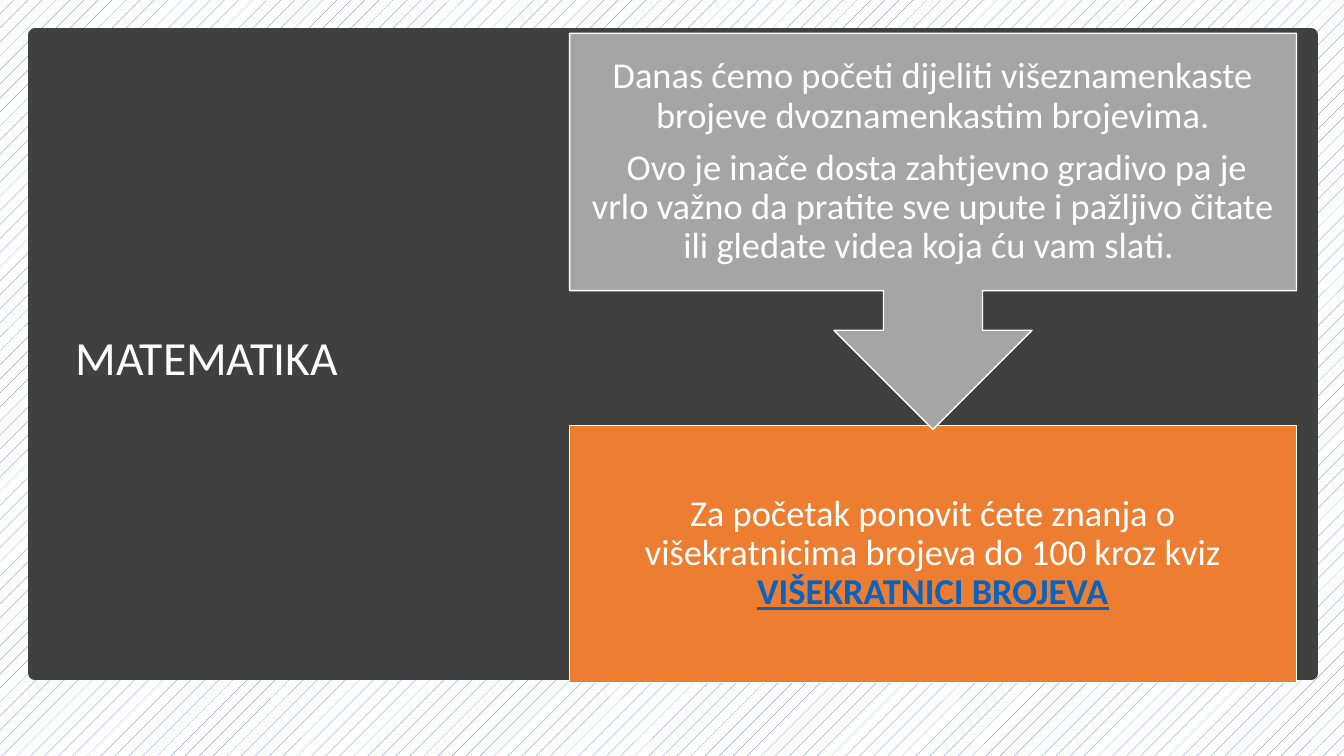
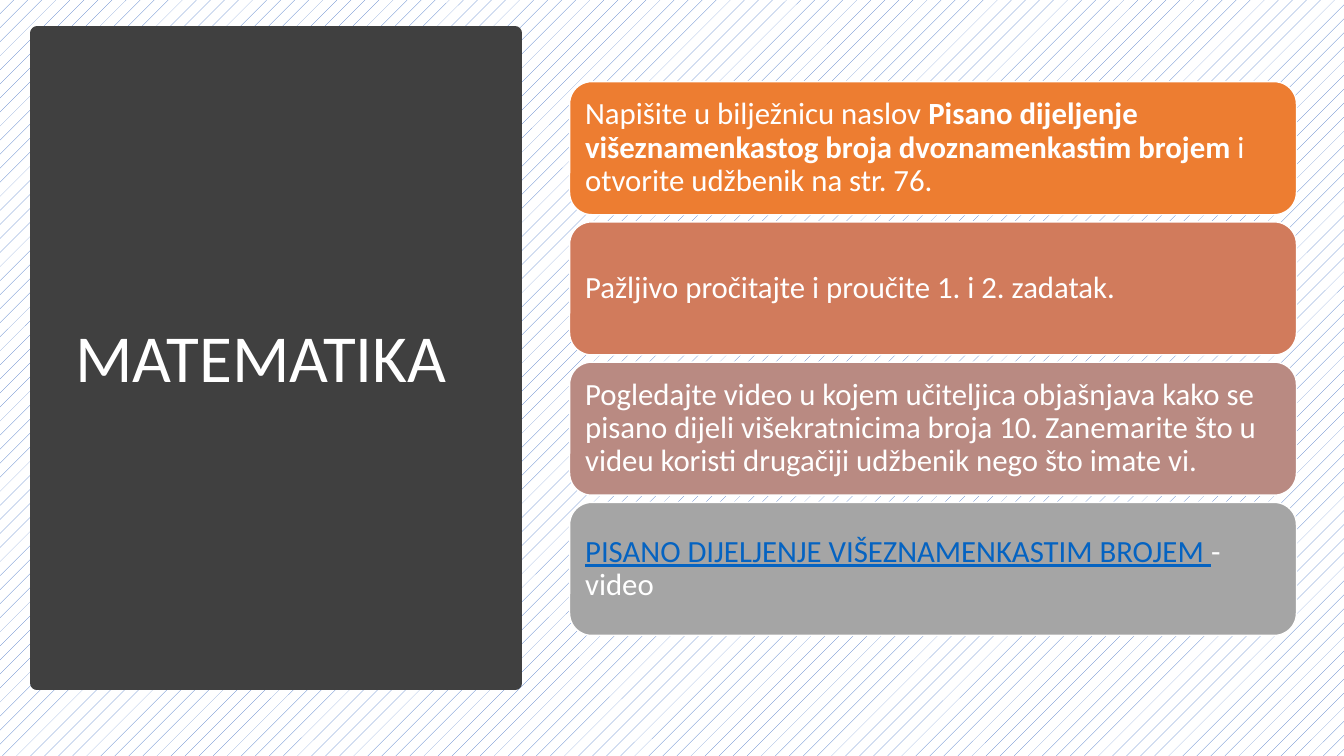
from pptx import Presentation
from pptx import util as u
from pptx.dml.color import RGBColor
from pptx.enum import dml, shapes, text

WHITE, DARK, GREY, ORANGE = "FFFFFF", "404040", "A5A5A5", "ED7D31"
PATTERN_BLUE, LINK_BLUE = "4472C4", "0563C1"
PLAIN, BOLD, LINK, BOLD_LINK = "plain", "bold", "link", "bold link"
CONTENT_LEFT, CONTENT_WIDTH = 42.38, 54.08


def rgb(code):
    return RGBColor.from_string(code)


class Lesson:
    """Style and current slide of the lesson; lengths are percentages of the slide."""

    font = "Calibri"

    def __init__(self):
        self.deck = Presentation()
        self.deck.slide_width = u.Inches(13.33)
        self.deck.slide_height = u.Inches(7.5)
        self.slide = None

    def area(self, left, top, width, height):
        across, down = self.deck.slide_width / 100, self.deck.slide_height / 100
        return (int(left * across), int(top * down),
                int(width * across), int(height * down))

    def new_slide(self):
        self.slide = self.deck.slides.add_slide(self.deck.slide_layouts[6])
        backdrop = self.slide.background.fill
        backdrop.patterned()
        backdrop.pattern = dml.MSO_PATTERN.PERCENT_5
        backdrop.fore_color.rgb = rgb(PATTERN_BLUE)
        backdrop.back_color.rgb = rgb(WHITE)

    def block(self, kind, place, fill, outline=WHITE, weight=1):
        block = self.slide.shapes.add_shape(kind, *self.area(*place))
        block.shadow.inherit = False
        block.fill.solid()
        block.fill.fore_color.rgb = rgb(fill)
        block.line.color.rgb = rgb(outline)
        block.line.width = u.Pt(weight)
        return block

    def panel(self, *place):
        self.block(shapes.MSO_SHAPE.RECTANGLE, place, DARK, DARK, 10)

    def fill_text(self, holder, paragraphs, size, align, inset, after=0.35):
        frame = holder.text_frame
        frame.word_wrap = True
        frame.vertical_anchor = text.MSO_ANCHOR.MIDDLE
        frame.margin_left = frame.margin_right = u.Inches(inset)
        frame.margin_top = frame.margin_bottom = u.Inches(inset)
        for index, pieces in enumerate(paragraphs):
            paragraph = frame.add_paragraph() if index else frame.paragraphs[0]
            paragraph.alignment = align
            paragraph.line_spacing = 0.9
            paragraph.space_after = u.Pt(after * size)
            paragraph.font.name = self.font
            paragraph.font.size = u.Pt(size)
            paragraph.font.color.rgb = rgb(WHITE)
            for words, style in pieces:
                run = paragraph.add_run()
                run.text = words
                if style in (BOLD, BOLD_LINK):
                    run.font.bold = True
                if style in (LINK, BOLD_LINK):
                    run.font.underline = True
                    run.font.color.rgb = rgb(LINK_BLUE)

    def title(self, words, size):
        heading = self.slide.shapes.add_textbox(*self.area(4.88, 9.33, 31.2, 76.67))
        self.fill_text(heading, [[(words, PLAIN)]], size, text.PP_ALIGN.LEFT, 0.1, after=0)

    def step(self, kind, top, height, fill, paragraphs):
        step = self.block(kind, (CONTENT_LEFT, top, CONTENT_WIDTH, height), fill)
        self.fill_text(step, paragraphs, 26, text.PP_ALIGN.CENTER, 0.2)

    def cards(self, entries, top=10.8, height=17.6, pitch=18.55):
        for row, (fill, pieces) in enumerate(entries):
            place = (CONTENT_LEFT, top + row * pitch, CONTENT_WIDTH, height)
            card = self.block(shapes.MSO_SHAPE.ROUNDED_RECTANGLE, place, fill)
            self.fill_text(card, [pieces], 22, text.PP_ALIGN.LEFT, 0.09)


def main():
    lesson = Lesson()

    lesson.new_slide()
    lesson.panel(2.62, 4.67, 94.95, 84.4)
    lesson.title("MATEMATIKA", 34)
    lesson.step(shapes.MSO_SHAPE.RECTANGLE, 56.27, 34, ORANGE, [
        [("Za početak ponovit ćete znanja o višekratnicima brojeva do 100 kroz kviz ", PLAIN),
         ("VIŠEKRATNICI BROJEVA", BOLD_LINK)],
    ])
    lesson.step(shapes.MSO_SHAPE.DOWN_ARROW_CALLOUT, 4.4, 52.4, GREY, [
        [("Danas ćemo početi dijeliti višeznamenkaste brojeve dvoznamenkastim brojevima.", PLAIN)],
        [(" Ovo je inače dosta zahtjevno gradivo pa je vrlo važno da pratite sve upute "
          "i pažljivo čitate ili gledate videa koja ću vam slati. ", PLAIN)],
    ])

    lesson.new_slide()
    lesson.panel(2.78, 4.4, 35.55, 86)
    lesson.title("MATEMATIKA", 48)
    lesson.cards([
        (ORANGE, [("Napišite u bilježnicu naslov ", PLAIN),
                  ("Pisano dijeljenje višeznamenkastog broja dvoznamenkastim brojem ", BOLD),
                  ("i otvorite udžbenik na str. 76.", PLAIN)]),
        ("D17B5C", [("Pažljivo pročitajte i proučite 1. i 2. zadatak.", PLAIN)]),
        ("B98A82", [("Pogledajte video u kojem učiteljica objašnjava kako se pisano dijeli "
                     "višekratnicima broja 10. Zanemarite što u videu koristi drugačiji "
                     "udžbenik nego što imate vi.", PLAIN)]),
        (GREY, [("PISANO DIJELJENJE VIŠEZNAMENKASTIM BROJEM ", LINK), ("- video", PLAIN)]),
    ])

    lesson.deck.save("out.pptx")


if __name__ == "__main__":
    main()
